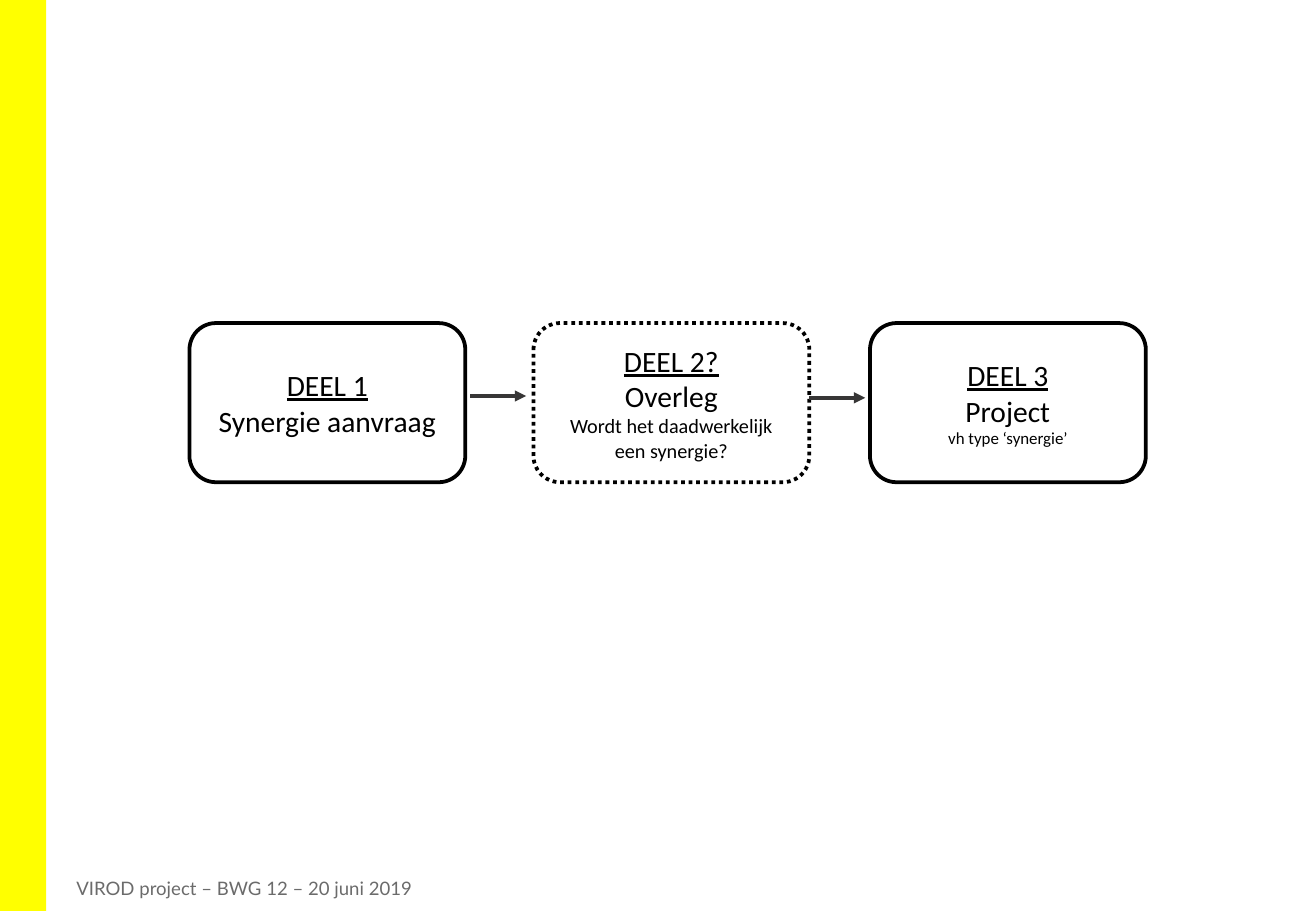
"""Build a slide with the three parts of a synergy process."""
from dataclasses import dataclass
from typing import Optional

from lxml import etree
from pptx import Presentation
from pptx import util as u
from pptx.dml.color import RGBColor
from pptx.enum import dml, shapes, text
from pptx.oxml import ns


@dataclass(frozen=True)
class Theme:
    ink: str = "000000"
    paper: str = "FFFFFF"
    arrow: str = "373636"
    accent: str = "FFFF00"
    muted: str = "6B6B6B"
    body_font: str = "Calibri"
    footer_font: str = "Lato"
    title_size: float = 17.5
    note_size: float = 12
    small_size: float = 10
    footer_size: float = 11
    stroke: float = 2.25


@dataclass(frozen=True)
class Step:
    left: float
    title: str
    name: str
    note: str = ""
    note_size: float = 0
    dash: Optional[dml.MSO_LINE] = None


@dataclass(frozen=True)
class Arrow:
    left: float
    top: float


THEME = Theme()
WIDTH, HEIGHT = u.Inches(10.83), u.Inches(7.5)
STEP_TOP, STEP_WIDTH, STEP_HEIGHT = 35.47, 20.96, 17.47
ARROW_LENGTH = 4.25
STEPS = [
    Step(14.4, "DEEL 1", "Synergie aanvraag"),
    Step(40.54, "DEEL 2?", "Overleg", "Wordt het daadwerkelijk een synergie?",
         THEME.note_size, dml.MSO_LINE.ROUND_DOT),
    Step(66.11, "DEEL 3", "Project", "vh type ‘synergie’", THEME.small_size),
]
ARROWS = [Arrow(35.73, 43.47), Arrow(61.5, 43.67)]


def x(share: float) -> int:
    """Turn a percentage of the slide width into a length."""
    return round(WIDTH * share / 100)


def y(share: float) -> int:
    """Turn a percentage of the slide height into a length."""
    return round(HEIGHT * share / 100)


def add_text(p, content: str, *, size: float, font: str = THEME.body_font,
             color: str = THEME.ink, underline: bool = False,
             align=text.PP_ALIGN.CENTER) -> None:
    """Write one formatted run into a paragraph."""
    p.alignment = align
    r = p.add_run()
    r.text = content
    r.font.name = font
    r.font.size = u.Pt(size)
    r.font.underline = underline
    r.font.color.rgb = RGBColor.from_string(color)


def add_box(s, kind, left: float, top: float, width: float, height: float, fill: str):
    """Add a filled shape without shadow or outline."""
    sp = s.shapes.add_shape(kind, x(left), y(top), x(width), y(height))
    sp.shadow.inherit = False
    sp.fill.solid()
    sp.fill.fore_color.rgb = RGBColor.from_string(fill)
    sp.line.fill.background()
    return sp


def set_line(line, color: str) -> None:
    """Give a line its colour and the common stroke width."""
    line.color.rgb = RGBColor.from_string(color)
    line.width = u.Pt(THEME.stroke)


def draw_step(s, step: Step) -> None:
    """Draw one rounded box with its lines of text."""
    sp = add_box(s, shapes.MSO_SHAPE.ROUNDED_RECTANGLE, step.left, STEP_TOP,
                 STEP_WIDTH, STEP_HEIGHT, THEME.paper)
    set_line(sp.line, THEME.ink)
    if step.dash is not None:
        sp.line.dash_style = step.dash
    tf = sp.text_frame
    tf.word_wrap = True
    tf.vertical_anchor = text.MSO_ANCHOR.MIDDLE
    add_text(tf.paragraphs[0], step.title, size=THEME.title_size, underline=True)
    add_text(tf.add_paragraph(), step.name, size=THEME.title_size)
    if step.note:
        add_text(tf.add_paragraph(), step.note, size=step.note_size)


def draw_arrow(s, arrow: Arrow) -> None:
    """Draw one horizontal arrow between two boxes."""
    c = s.shapes.add_connector(shapes.MSO_CONNECTOR.STRAIGHT, x(arrow.left), y(arrow.top),
                               x(arrow.left + ARROW_LENGTH), y(arrow.top))
    set_line(c.line, THEME.arrow)
    etree.SubElement(c.line._get_or_add_ln(), ns.qn("a:tailEnd"), type="triangle")
    etree.SubElement(c._element.spPr, ns.qn("a:effectLst"))


def draw_footer(s) -> None:
    """Write the project line at the foot of the slide."""
    tf = s.shapes.add_textbox(x(4.89), y(96.27), x(61.4), y(2.53)).text_frame
    tf.word_wrap = True
    tf.margin_top = tf.margin_bottom = 0
    tf.vertical_anchor = text.MSO_ANCHOR.MIDDLE
    add_text(tf.paragraphs[0], "VIROD project – BWG 12 – 20 juni 2019",
             size=THEME.footer_size, font=THEME.footer_font, color=THEME.muted,
             align=text.PP_ALIGN.LEFT)


def main() -> None:
    """Build the slide and save it."""
    prs = Presentation()
    prs.slide_width, prs.slide_height = WIDTH, HEIGHT
    s = prs.slides.add_slide(prs.slide_layouts[6])
    add_box(s, shapes.MSO_SHAPE.RECTANGLE, 0, 0, 3.51, 100, THEME.accent)
    draw_footer(s)
    for step in STEPS:
        draw_step(s, step)
    for arrow in ARROWS:
        draw_arrow(s, arrow)
    prs.save("out.pptx")


if __name__ == "__main__":
    main()
